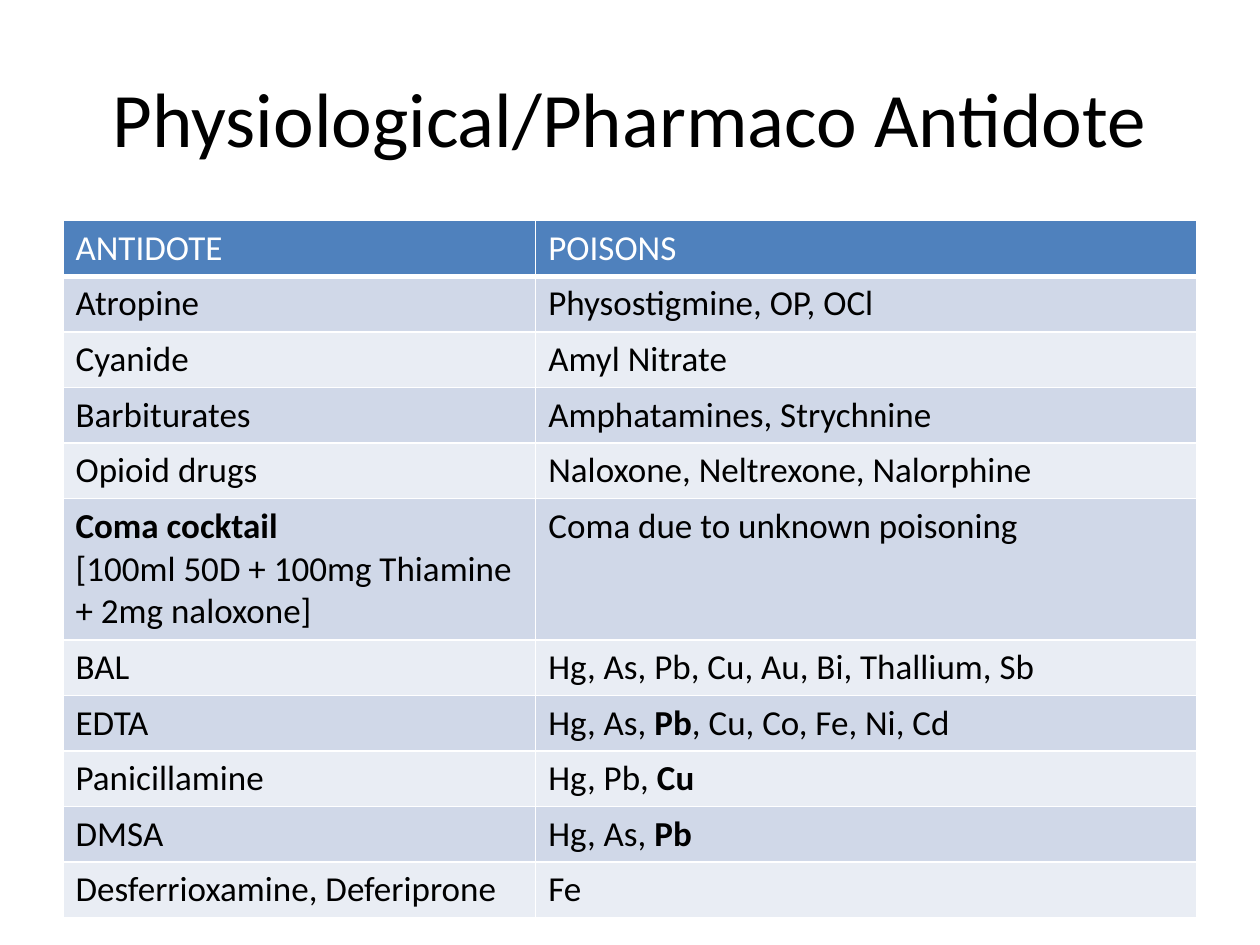
from dataclasses import dataclass

from lxml.etree import SubElement
from pptx import Presentation
from pptx.dml.color import RGBColor as Rgb
from pptx.enum.text import MSO_ANCHOR as Anchor, PP_ALIGN as Align
from pptx.oxml.ns import qn
from pptx.util import Cm, Pt


@dataclass(frozen=True)
class Theme:
    font: str = "Calibri"
    title_size: int = 44
    cell_size: int = 20
    ink: str = "000000"
    paper: str = "FFFFFF"
    header: str = "4F81BD"
    bands: tuple = ("D0D8E8", "E9EDF4")
    rule: int = 1
    header_rule: int = 3


HEADINGS = ("ANTIDOTE", "POISONS")
# Text between asterisks is bold; a line break starts a new paragraph.
ANTIDOTES = [
    ("Atropine", "Physostigmine, OP, OCl"),
    ("Cyanide", "Amyl Nitrate"),
    ("Barbiturates", "Amphatamines, Strychnine"),
    ("Opioid drugs", "Naloxone, Neltrexone, Nalorphine"),
    ("*Coma cocktail*\n[100ml 50D + 100mg Thiamine + 2mg naloxone]",
     "Coma due to unknown poisoning"),
    ("BAL", "Hg, As, Pb, Cu, Au, Bi, Thallium, Sb"),
    ("EDTA", "Hg, As, *Pb*, Cu, Co, Fe, Ni, Cd"),
    ("Panicillamine", "Hg, Pb, *Cu*"),
    ("DMSA", "Hg, As, *Pb*"),
    ("Desferrioxamine, Deferiprone", "Fe"),
]


def write(frame, text, *, font, size, color, align=Align.LEFT):
    """Fill a text frame, one paragraph a line, with *bold* parts."""
    for number, line in enumerate(text.split("\n")):
        para = frame.add_paragraph() if number else frame.paragraphs[0]
        para.alignment = align
        for index, part in enumerate(line.split("*")):
            if not part:
                continue
            span = para.add_run()
            span.text = part
            span.font.name = font
            span.font.size = Pt(size)
            span.font.bold = index % 2 == 1
            span.font.color.rgb = Rgb.from_string(color)


def set_borders(cell, color, widths):
    """Draw the cell's edges; borders must come before the fill."""
    properties = cell._tc.get_or_add_tcPr()
    for side, width in widths.items():
        line = SubElement(properties, qn(f"a:ln{side}"), w=str(Pt(width)))
        fill = SubElement(line, qn("a:solidFill"))
        SubElement(fill, qn("a:srgbClr"), val=color)


class SlideBuilder:
    def __init__(self, deck, theme):
        self.theme = theme
        self.page = deck.slides.add_slide(deck.slide_layouts[5])

    def title(self, text, left, top, width, height):
        box = self.page.shapes.title
        box.left, box.top, box.width, box.height = left, top, width, height
        box.text_frame.vertical_anchor = Anchor.MIDDLE
        write(box.text_frame, text, font=self.theme.font,
              size=self.theme.title_size, color=self.theme.ink, align=Align.CENTER)

    def table(self, rows, left, top, widths, line_height, extra_height):
        heights = [line_height + (extra_height if "\n" in row[0] else 0) for row in rows]
        frame = self.page.shapes.add_table(
            len(rows), len(widths), left, top, sum(widths), sum(heights))
        grid = frame.table
        for column, width in zip(grid.columns, widths):
            column.width = width
        for number, (row, height) in enumerate(zip(rows, heights)):
            grid.rows[number].height = height
            for column, text in enumerate(row):
                self.cell(grid.cell(number, column), text, number)

    def cell(self, cell, text, number):
        theme = self.theme
        is_header = number == 0
        borders = dict.fromkeys("LRTB", theme.rule)
        if is_header:
            borders["B"] = theme.header_rule
        set_borders(cell, theme.paper, borders)
        cell.fill.solid()
        cell.fill.fore_color.rgb = Rgb.from_string(
            theme.header if is_header else theme.bands[(number - 1) % 2])
        write(cell.text_frame, text, font=theme.font, size=theme.cell_size,
              color=theme.paper if is_header else theme.ink)


def main():
    deck = Presentation()
    deck.slide_width, deck.slide_height = Cm(25.4), Cm(19.05)
    slide = SlideBuilder(deck, Theme())

    # Heading
    slide.title("Physiological/Pharmaco Antidote",
                Cm(1.27), Cm(0.76), Cm(22.86), Cm(3.18))

    # Antidotes and the poisons they treat
    slide.table([HEADINGS, *ANTIDOTES], Cm(1.27), Cm(4.45),
                widths=[Cm(9.53), Cm(13.33)],
                line_height=Cm(1.12), extra_height=Cm(1.72))

    deck.save("out.pptx")


if __name__ == "__main__":
    main()
